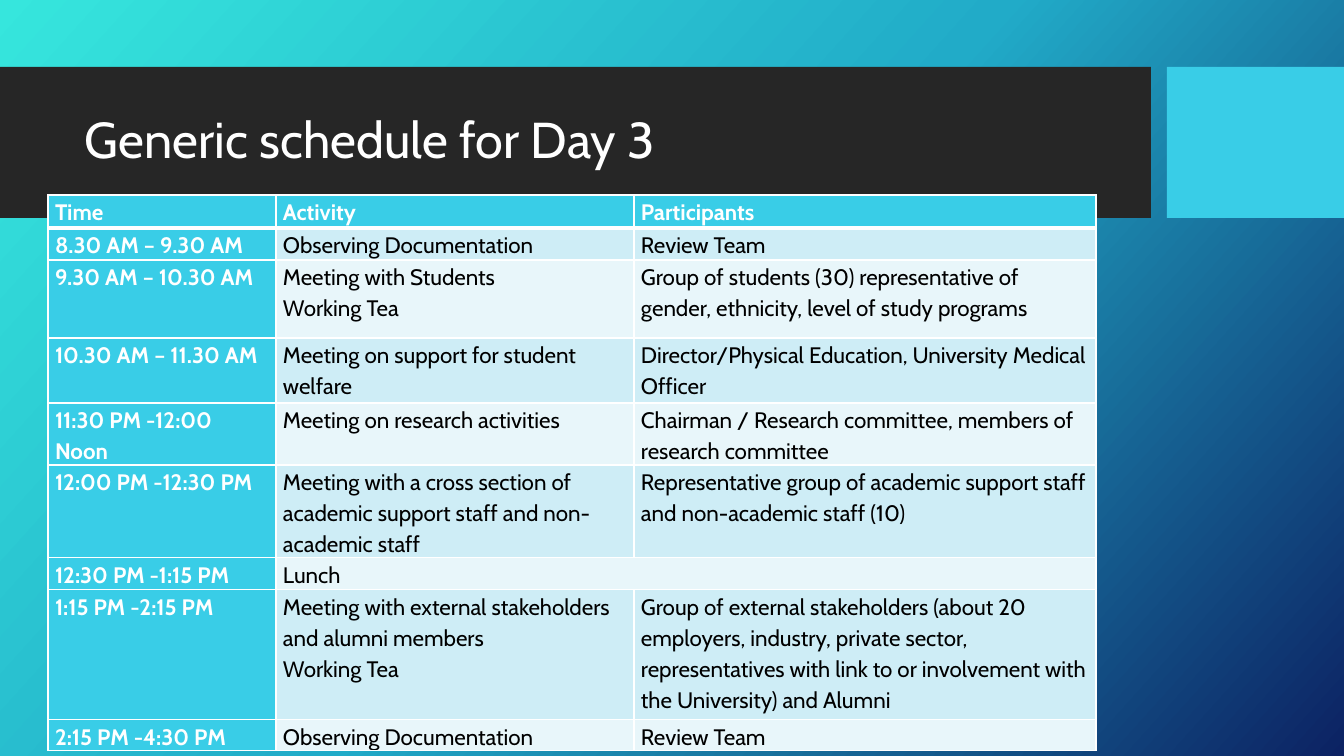
from copy import deepcopy

from lxml import etree
from pptx import Presentation
from pptx.dml.color import RGBColor
from pptx.enum.shapes import MSO_SHAPE
from pptx.enum.text import MSO_ANCHOR
from pptx.oxml.ns import qn
from pptx.util import Emu, Pt

RECTANGLE = MSO_SHAPE.RECTANGLE
MIDDLE = MSO_ANCHOR.MIDDLE
TOP = MSO_ANCHOR.TOP

EMU_PER_PX = 914400 / 100.8
FONT = "Cabin"
WHITE = RGBColor(0xFF, 0xFF, 0xFF)
BLACK = RGBColor(0x00, 0x00, 0x00)
CHARCOAL = RGBColor(0x26, 0x26, 0x26)
CYAN = RGBColor(0x39, 0xCD, 0xE7)
BANDS = (RGBColor(0xCE, 0xED, 0xF6), RGBColor(0xE8, 0xF6, 0xFA))
BACKGROUND = (
    (0, RGBColor(0x36, 0xE6, 0xDD)),
    (0.5, RGBColor(0x21, 0xAB, 0xC8)),
    (1, RGBColor(0x0C, 0x22, 0x63)),
)

COLUMN_WIDTHS = (228, 358, 462)
# Height in px, then time, activity and participants; None joins a cell to its left one.
SCHEDULE = (
    (33, "Time", "Activity", "Participants"),
    (32, "8.30 AM – 9.30 AM", "Observing Documentation", "Review Team"),
    (78, "9.30 AM – 10.30 AM", "Meeting with Students\nWorking Tea",
     "Group of students (30) representative of gender, ethnicity, "
     "level of study programs"),
    (65, "10.30 AM – 11.30 AM", "Meeting on support for student welfare",
     "Director/Physical Education, University Medical Officer"),
    (62, "11:30 PM -12:00 Noon", "Meeting on research activities",
     "Chairman / Research committee, members of research committee"),
    (93, "12:00 PM -12:30 PM",
     "Meeting with a cross section of academic support staff and "
     "non-academic staff",
     "Representative group of academic support staff and "
     "non-academic staff (10)"),
    (32, "12:30 PM -1:15 PM", "Lunch", None),
    (130, "1:15 PM -2:15 PM",
     "Meeting with external stakeholders and alumni members\nWorking Tea",
     "Group of external stakeholders (about 20 employers, industry, private "
     "sector, representatives with link to or involvement with the "
     "University) and Alumni"),
    (31, "2:15 PM -4:30 PM", "Observing Documentation", "Review Team"),
)


def px(length):
    return Emu(round(length * EMU_PER_PX))


def paint_background(slide):
    fill = slide.background.fill
    fill.gradient()
    fill.gradient_angle = 318
    stop_list = slide.element.find(".//" + qn("a:gsLst"))
    stop_list.append(deepcopy(stop_list[-1]))
    for stop, (position, color) in zip(fill.gradient_stops, BACKGROUND):
        stop.position = position
        stop.color.rgb = color


def add_block(slide, left, top, width, height, color):
    block = slide.shapes.add_shape(
        RECTANGLE, px(left), px(top), px(width), px(height))
    block.shadow.inherit = False
    block.fill.solid()
    block.fill.fore_color.rgb = color
    block.line.fill.background()


def write(frame, text, size, color, bold, spacing):
    frame.text = text
    for paragraph in frame.paragraphs:
        paragraph.line_spacing = spacing
        font = paragraph.font
        font.name = FONT
        font.size = Pt(size)
        font.bold = bold
        font.color.rgb = color


def add_title(slide, text):
    title = slide.shapes.add_textbox(px(75), px(83), px(1059), px(119))
    frame = title.text_frame
    frame.word_wrap = True
    frame.vertical_anchor = MIDDLE
    write(frame, text, 36, WHITE, False, 0.9)


def set_borders(cell, top, bottom):
    """Draw white cell borders; top and bottom are widths in points."""
    properties = cell._tc.get_or_add_tcPr()
    widths = (("a:lnL", 1), ("a:lnR", 1), ("a:lnT", top), ("a:lnB", bottom))
    for index, (tag, width) in enumerate(widths):
        line = etree.Element(qn(tag), w=str(Pt(width)))
        fill = etree.SubElement(line, qn("a:solidFill"))
        etree.SubElement(fill, qn("a:srgbClr"), val=str(WHITE))
        properties.insert(index, line)


def fill_cell(cell, text, row, column):
    heading = row == 0 or column == 0
    cell.fill.solid()
    cell.fill.fore_color.rgb = CYAN if heading else BANDS[(row - 1) % 2]
    cell.margin_left = cell.margin_right = px(7)
    cell.margin_top = cell.margin_bottom = 0
    cell.vertical_anchor = TOP
    set_borders(cell, 3 if row == 1 else 1, 3 if row == 0 else 1)
    if text is not None:
        write(cell.text_frame, text, 16, WHITE if heading else BLACK,
              heading, 1.15)


def add_schedule(slide, left, top):
    height = sum(row[0] for row in SCHEDULE)
    table = slide.shapes.add_table(
        len(SCHEDULE), len(COLUMN_WIDTHS), px(left), px(top),
        px(sum(COLUMN_WIDTHS)), px(height)).table
    table.horz_banding = False
    for column, width in zip(table.columns, COLUMN_WIDTHS):
        column.width = px(width)
    for row, (row_height, *texts) in enumerate(SCHEDULE):
        table.rows[row].height = px(row_height)
        for column, text in enumerate(texts):
            cell = table.cell(row, column)
            fill_cell(cell, text, row, column)
            if text is None:
                table.cell(row, column - 1).merge(cell)


def main():
    presentation = Presentation()
    presentation.slide_width = px(1344)
    presentation.slide_height = px(756)
    slide = presentation.slides.add_slide(presentation.slide_layouts[6])
    paint_background(slide)
    add_block(slide, 0, 67, 1151, 151, CHARCOAL)
    add_block(slide, 1167, 67, 177, 151, CYAN)
    add_title(slide, "Generic schedule for Day 3")
    add_schedule(slide, 48, 195)
    presentation.save("out.pptx")


if __name__ == "__main__":
    main()
